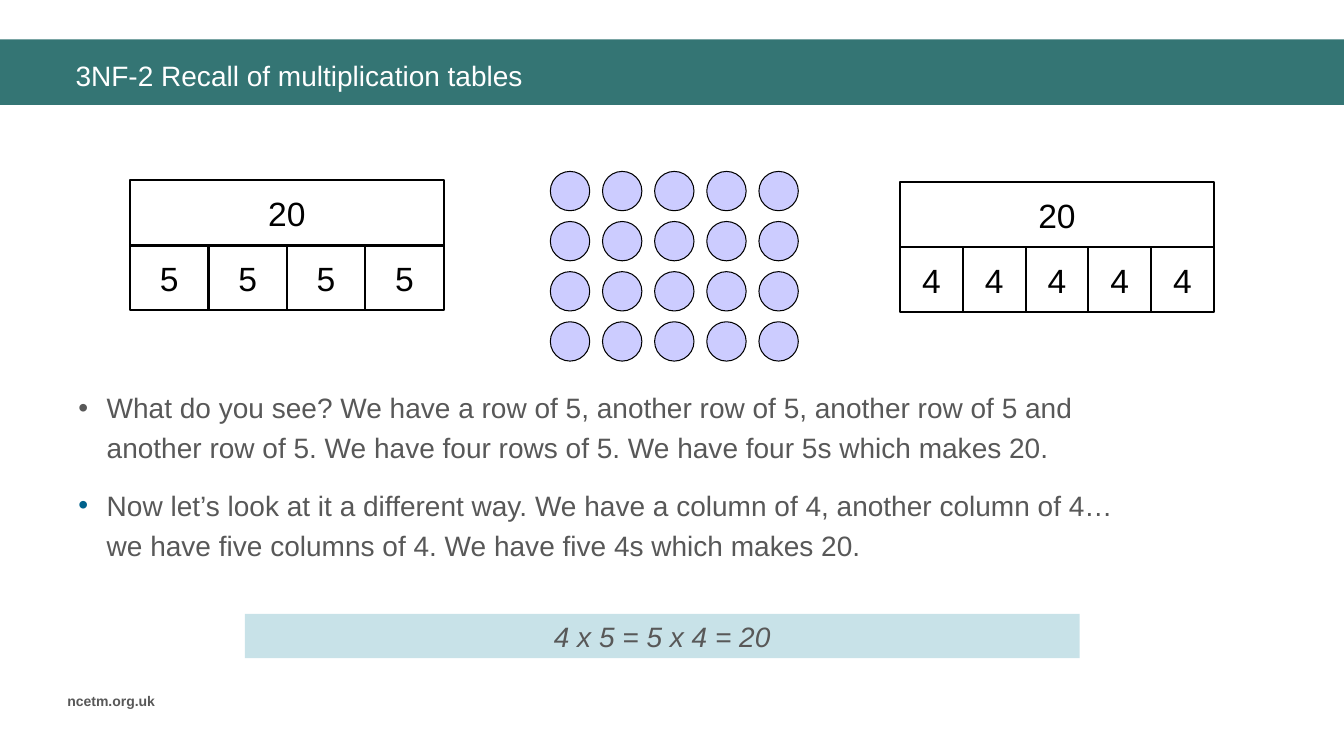
from dataclasses import dataclass
from itertools import product

from lxml.etree import SubElement
from pptx import Presentation
from pptx.dml.color import RGBColor
from pptx.enum.shapes import MSO_SHAPE
from pptx.enum.text import MSO_ANCHOR, PP_ALIGN
from pptx.oxml.ns import qn
from pptx.shapes.autoshape import Shape
from pptx.slide import Slide
from pptx.text.text import _Paragraph
from pptx.util import Inches, Pt

SLIDE_WIDTH = Inches(13.33)
SLIDE_HEIGHT = Inches(7.5)
FONT = "Arial"
TEAL, PALE_BLUE, LILAC = "347574", "C8E2E8", "CCCCFF"
GREY, BLACK, WHITE, BLUE = "585858", "000000", "FFFFFF", "00628C"


@dataclass(frozen=True)
class Area:
    """A rectangle in percent of the slide's width and height."""

    left: float
    top: float
    width: float
    height: float

    def box(self) -> tuple[int, int, int, int]:
        """Return left, top, width and height as slide lengths."""
        return (
            round(SLIDE_WIDTH * self.left / 100),
            round(SLIDE_HEIGHT * self.top / 100),
            round(SLIDE_WIDTH * self.width / 100),
            round(SLIDE_HEIGHT * self.height / 100),
        )


@dataclass(frozen=True)
class TextStyle:
    """The look of a piece of text."""

    size: float
    color: str
    bold: bool = False
    italic: bool = False


@dataclass(frozen=True)
class BarModel:
    """A total drawn above its equal shares."""

    left: float
    top: float
    total: int
    share: int


@dataclass(frozen=True)
class Bullet:
    """A bulleted sentence with its marker colour."""

    text: str
    marker_color: str


BODY_STYLE = TextStyle(20, GREY)
NUMBER_STYLE = TextStyle(24, BLACK)
BAR_WIDTH, BAR_ROW = 23.33, 8.6
BAR_MODELS = [BarModel(9.68, 23.87, 20, 5), BarModel(66.98, 24.13, 20, 4)]
COUNTERS = Area(40.95, 22.67, 2.93, 5.2)
COUNTER_ROWS, COUNTER_COLUMNS = 4, 5
COUNTER_ROW_STEP, COUNTER_COLUMN_STEP = 6.63, 3.88
BULLETS = [
    Bullet(
        "What do you see? We have a row of 5, another row of 5, another row of 5 and "
        "another row of 5. We have four rows of 5. We have four 5s which makes 20.",
        GREY,
    ),
    Bullet(
        "Now let’s look at it a different way. We have a column of 4, another column "
        "of 4… we have five columns of 4. We have five 4s which makes 20.",
        BLUE,
    ),
]


def rgb(color: str) -> RGBColor:
    """Turn a hex string into a colour."""
    return RGBColor.from_string(color)


def format_runs(paragraph: _Paragraph, style: TextStyle) -> None:
    """Apply a text style to every run of a paragraph."""
    for run in paragraph.runs:
        run.font.name = FONT
        run.font.size = Pt(style.size)
        run.font.bold = style.bold
        run.font.italic = style.italic
        run.font.color.rgb = rgb(style.color)


def write(shape: Shape, text: str, style: TextStyle, alignment: PP_ALIGN) -> None:
    """Set one vertically centred paragraph in a shape."""
    frame = shape.text_frame
    frame.text = text
    frame.word_wrap = True
    frame.vertical_anchor = MSO_ANCHOR.MIDDLE
    paragraph = frame.paragraphs[0]
    paragraph.alignment = alignment
    format_runs(paragraph, style)


def add_figure(
    slide: Slide, kind: MSO_SHAPE, area: Area, fill: str | None = None, line_width: float = 0
) -> Shape:
    """Draw a preset shape with an optional fill and black outline."""
    shape = slide.shapes.add_shape(kind, *area.box())
    shape.shadow.inherit = False
    if fill:
        shape.fill.solid()
        shape.fill.fore_color.rgb = rgb(fill)
    else:
        shape.fill.background()
    if line_width:
        shape.line.color.rgb = rgb(BLACK)
        shape.line.width = Pt(line_width)
    else:
        shape.line.fill.background()
    return shape


def add_label(slide: Slide, area: Area, text: str, style: TextStyle) -> None:
    """Place a left-aligned line of text."""
    write(slide.shapes.add_textbox(*area.box()), text, style, PP_ALIGN.LEFT)


def add_bar_model(slide: Slide, model: BarModel) -> None:
    """Draw the total and the row of equal shares below it."""
    for row, (value, count) in enumerate([(model.total, 1), (model.share, model.total // model.share)]):
        width = BAR_WIDTH / count
        for column in range(count):
            area = Area(model.left + column * width, model.top + row * BAR_ROW, width, BAR_ROW)
            cell = add_figure(slide, MSO_SHAPE.RECTANGLE, area, line_width=1.5)
            write(cell, str(value), NUMBER_STYLE, PP_ALIGN.CENTER)


def add_counters(slide: Slide) -> None:
    """Draw the array of counters."""
    for row, column in product(range(COUNTER_ROWS), range(COUNTER_COLUMNS)):
        area = Area(
            COUNTERS.left + column * COUNTER_COLUMN_STEP,
            COUNTERS.top + row * COUNTER_ROW_STEP,
            COUNTERS.width,
            COUNTERS.height,
        )
        add_figure(slide, MSO_SHAPE.OVAL, area, LILAC, 0.75)


def add_bullets(slide: Slide, area: Area) -> None:
    """Write the bulleted explanation."""
    frame = slide.shapes.add_textbox(*area.box()).text_frame
    frame.word_wrap = True
    for index, bullet in enumerate(BULLETS):
        paragraph = frame.add_paragraph() if index else frame.paragraphs[0]
        paragraph.text = bullet.text
        paragraph.line_spacing = 1.2
        paragraph.space_before = Pt(6 if index else 0)
        paragraph.space_after = Pt(6)
        properties = paragraph._p.get_or_add_pPr()
        properties.set("marL", str(Inches(0.28)))
        properties.set("indent", str(-Inches(0.28)))
        marker_color = SubElement(properties, qn("a:buClr"))
        SubElement(marker_color, qn("a:srgbClr"), val=bullet.marker_color)
        SubElement(properties, qn("a:buFont"), typeface=FONT)
        SubElement(properties, qn("a:buChar"), char="•")
        format_runs(paragraph, BODY_STYLE)


def main() -> None:
    """Build and save the multiplication slide."""
    presentation = Presentation()
    presentation.slide_width = SLIDE_WIDTH
    presentation.slide_height = SLIDE_HEIGHT
    slide = presentation.slides.add_slide(presentation.slide_layouts[6])
    add_figure(slide, MSO_SHAPE.RECTANGLE, Area(0, 5.2, 100, 8.67), TEAL)
    add_label(slide, Area(4.28, 90.93, 9.08, 3.6), "ncetm.org.uk", TextStyle(10, GREY, bold=True))
    add_label(slide, Area(4.88, 6.8, 92.4, 6.27), "3NF-2 Recall of multiplication tables", TextStyle(20, WHITE))
    add_counters(slide)
    for model in BAR_MODELS:
        add_bar_model(slide, model)
    add_bullets(slide, Area(5.1, 50.13, 80.25, 19.33))
    result = add_figure(slide, MSO_SHAPE.RECTANGLE, Area(18.23, 81.2, 62.1, 5.87), PALE_BLUE)
    write(result, "4 x 5 = 5 x 4 = 20", TextStyle(20, GREY, italic=True), PP_ALIGN.CENTER)
    presentation.save("out.pptx")


if __name__ == "__main__":
    main()
